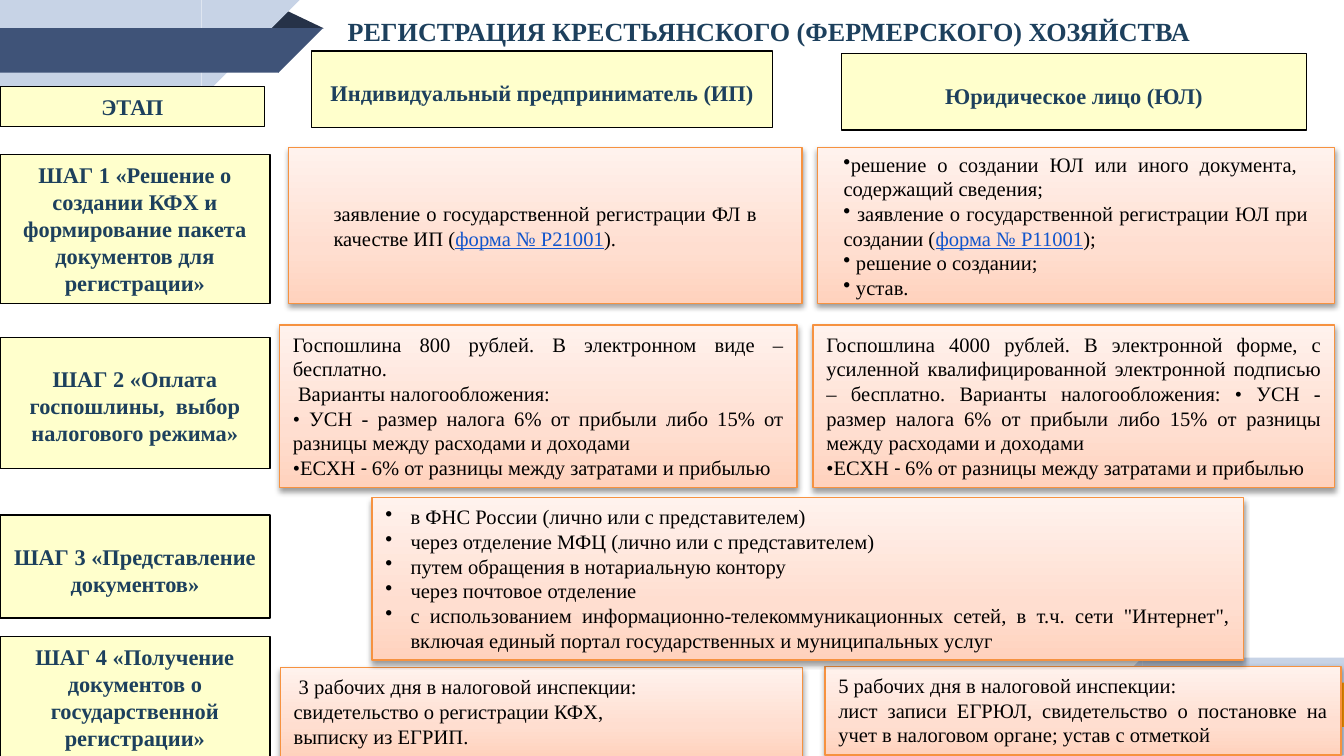
from copy import deepcopy

from lxml import etree
from pptx import Presentation
from pptx import util as u
from pptx.dml import color as clr
from pptx.enum import shapes, text
from pptx.oxml import ns

Pt = u.Pt
SHAPE = shapes.MSO_SHAPE
ALIGN = text.PP_ALIGN
ANCHOR = text.MSO_ANCHOR

COLORS = {
    "navy": "1D405D", "black": "000000", "link": "1155CC", "cream": "FFFFCC",
    "orange": "F69240", "peach": "FFD2BD", "peach_mid": "FFDED0", "peach_light": "FFF2ED",
    "pale_blue": "C7D3E6", "blue": "3F5378", "dark_blue": "263248",
    "amber": "FF9800", "brown": "D26F00",
}


def rgb(name):
    return clr.RGBColor.from_string(COLORS[name])


def add_run(p, content, size=11, color="black", bold=False, underline=False,
            font="Times New Roman"):
    r = p.add_run()
    r.text = content
    f = r.font
    f.name, f.size, f.bold, f.underline = font, Pt(size), bold, underline
    f.color.rgb = rgb(color)


def add_xml(parent, tag, **attrs):
    return etree.SubElement(parent, ns.qn(tag), attrs)


class SlideBuilder:
    HEADING = dict(size=12, color="navy", bold=True)

    def __init__(self, prs):
        self.slide = prs.slides.add_slide(prs.slide_layouts[5])

    def title(self, content, x, y, w, h):
        sp = self.slide.shapes.title
        sp.left, sp.top, sp.width, sp.height = map(Pt, (x, y, w, h))
        tf = self.frame(sp, anchor=ANCHOR.MIDDLE)
        p = tf.paragraphs[0]
        p.alignment = ALIGN.CENTER
        add_run(p, content, **{**self.HEADING, "size": 14})

    def frame(self, sp, top=3.6, anchor=ANCHOR.TOP):
        tf = sp.text_frame
        tf.word_wrap = True
        tf.auto_size = text.MSO_AUTO_SIZE.NONE
        tf.vertical_anchor = anchor
        tf.margin_left = tf.margin_right = Pt(7.2)
        tf.margin_top, tf.margin_bottom = Pt(top), Pt(3.6)
        return tf

    def shape(self, kind, x, y, w, h, fill, rotation=0):
        sp = self.slide.shapes.add_shape(kind, Pt(x), Pt(y), Pt(w), Pt(h))
        sp.shadow.inherit = False
        sp.fill.solid()
        sp.fill.fore_color.rgb = rgb(fill)
        sp.line.fill.background()
        sp.rotation = rotation
        return sp

    def outline(self, sp, color):
        sp.line.color.rgb = rgb(color)
        sp.line.width = Pt(0.75)

    def heading(self, content, x, y, w, h, top=3.6):
        sp = self.shape(SHAPE.RECTANGLE, x, y, w, h, "cream")
        self.outline(sp, "black")
        p = self.frame(sp, top).paragraphs[0]
        p.alignment = ALIGN.CENTER
        add_run(p, content, **self.HEADING)

    def card(self, paragraphs, x, y, w, h, anchor=ANCHOR.TOP, align=ALIGN.JUSTIFY,
             bullets=False, margin=0, right=0, indent=0):
        sp = self.shape(SHAPE.RECTANGLE, x, y, w, h, "peach")
        self.outline(sp, "orange")
        self.gradient(sp)
        self.soft_shadow(sp)
        tf = self.frame(sp, anchor=anchor)
        for i, runs in enumerate(paragraphs):
            p = tf.add_paragraph() if i else tf.paragraphs[0]
            p.alignment = align
            pPr = p._p.get_or_add_pPr()
            for key, value in (("marL", margin), ("marR", right), ("indent", indent)):
                pPr.set(key, str(int(Pt(value))))
            if bullets:
                add_xml(add_xml(pPr, "a:buClr"), "a:srgbClr", val=COLORS["black"])
                add_xml(pPr, "a:buChar", char="•")
            for content, style in [(runs, {})] if isinstance(runs, str) else runs:
                add_run(p, content, **style)

    def gradient(self, sp):
        sp.fill.gradient()
        sp.fill.gradient_angle = 90
        stops = sp._element.spPr.find(ns.qn("a:gradFill")).find(ns.qn("a:gsLst"))
        stops.insert(1, deepcopy(stops[0]))
        names = ("peach", "peach_mid", "peach_light")
        for stop, pos, name in zip(sp.fill.gradient_stops, (0, 0.35, 1), names):
            stop.position = pos
            stop.color.rgb = rgb(name)

    def soft_shadow(self, sp):
        effects = sp._element.spPr.find(ns.qn("a:effectLst"))
        shadow = add_xml(effects, "a:outerShdw", blurRad=str(int(Pt(3.1))),
                         dist=str(int(Pt(1.6))), dir="5400000", rotWithShape="0")
        color = add_xml(shadow, "a:srgbClr", val=COLORS["black"])
        add_xml(color, "a:alpha", val="38000")

    def ribbon(self, band, accent, fold, fold_at, fold_turn, turn, wide, narrow):
        """Fold, then two bars, each a rectangle ending in a right triangle."""
        sp = self.shape(SHAPE.ISOSCELES_TRIANGLE, *fold_at, 31, 10, fold, fold_turn)
        sp.adjustments[0] = 0.324
        for (bar_x, tip_x, y, length, side), fill in ((wide, band), (narrow, accent)):
            self.shape(SHAPE.RECTANGLE, bar_x, y, length, side, fill)
            self.shape(SHAPE.RIGHT_TRIANGLE, tip_x, y, side, side, fill, turn)


def main():
    prs = Presentation()
    prs.slide_width, prs.slide_height = Pt(720), Pt(405)
    s = SlideBuilder(prs)

    # Corner ribbons
    s.ribbon("pale_blue", "amber", "brown", (547, 389.5), 180, 270,
             (612, 559.5, 352.3, 108, 52.5), (571, 547.2, 365.7, 149, 23.8))
    s.ribbon("pale_blue", "blue", "dark_blue", (142.5, 5.2), 0, 90,
             (0, 108, 0, 108, 52.5), (0, 149.2, 15.1, 149.5, 23.8))

    # Title and column headings
    s.title("РЕГИСТРАЦИЯ КРЕСТЬЯНСКОГО (ФЕРМЕРСКОГО) ХОЗЯЙСТВА ", 127.5, 4.3, 572.5, 24.5)
    s.heading("ЭТАП", 0, 46.3, 141.8, 21.6)
    s.heading("Индивидуальный предприниматель (ИП)", 167, 27.4, 247, 41, top=15)
    s.heading("Юридическое лицо (ЮЛ)", 450.7, 28.8, 249.4, 41, top=15)

    # Steps
    steps = [
        ("ШАГ 1 «Решение о создании КФХ и формирование пакета документов для регистрации»",
         82.8, 79.8, 3.6),
        ("ШАГ 2 «Оплата госпошлины,  выбор налогового режима»", 180.7, 70.2, 15),
        ("ШАГ 3 «Представление документов»", 275.8, 55.3, 15),
        ("ШАГ 4 «Получение документов о государственной регистрации»", 341, 65.5, 3.6),
    ]
    for content, y, h, top in steps:
        s.heading(content, 0, y, 144.6, h, top)

    # Step 1: documents
    link = dict(color="link", underline=True)
    s.card([[("заявление о государственной регистрации ФЛ в качестве ИП (", {}),
             ("форма № Р21001", link), ("). ", {})]],
           154.6, 79.2, 275.2, 83.5, anchor=ANCHOR.MIDDLE, margin=17, right=17)
    s.card(["решение о создании ЮЛ или иного документа,  содержащий сведения;",
            [(" заявление о государственной регистрации ЮЛ при создании (", {}),
             ("форма № Р11001", link), (");", {})],
            " решение о создании;",
            " устав."],
           437.8, 79.2, 277.2, 83.5, anchor=ANCHOR.MIDDLE, bullets=True, margin=7, right=7)

    # Step 2: duty and taxation
    farm_tax = [("•ЕСХН ", {}), ("- ", dict(font="Calibri")),
                ("6% от разницы между затратами и прибылью", {})]
    simple_tax = "• УСН - размер налога 6% от прибыли либо 15% от разницы между расходами и доходами"
    s.card(["Госпошлина 800 рублей. В электронном виде – бесплатно. ",
            " Варианты налогообложения:", simple_tax, farm_tax],
           149.8, 174.2, 277.2, 87.1)
    s.card(["Госпошлина 4000 рублей. В электронной форме, с усиленной квалифицированной "
            "электронной подписью – бесплатно. Варианты налогообложения: " + simple_tax,
            farm_tax],
           435.6, 174.2, 279.4, 87.1)

    # Step 4: results
    s.card([" 3 рабочих дня в налоговой инспекции:", "свидетельство о регистрации КФХ,",
            "выписку из ЕГРИП."],
           150.2, 357.8, 279.6, 47.5, align=ALIGN.LEFT)
    s.card(["5 рабочих дня в налоговой инспекции: ",
            "лист записи ЕГРЮЛ, свидетельство о постановке на учет в налоговом органе; "
            "устав с отметкой"],
           442, 357.1, 276.5, 47.5)

    # Step 3: ways to apply
    s.card(["в ФНС России (лично или с представителем)",
            "через отделение МФЦ (лично или с представителем)",
            "путем обращения в нотариальную контору",
            "через почтовое отделение",
            "с использованием информационно-телекоммуникационных сетей, в т.ч. сети "
            "\"Интернет\", включая единый портал государственных и муниципальных услуг"],
           199.4, 266.6, 466.8, 87.1, bullets=True, margin=13.5, indent=-13.5)

    prs.save("out.pptx")


if __name__ == "__main__":
    main()
